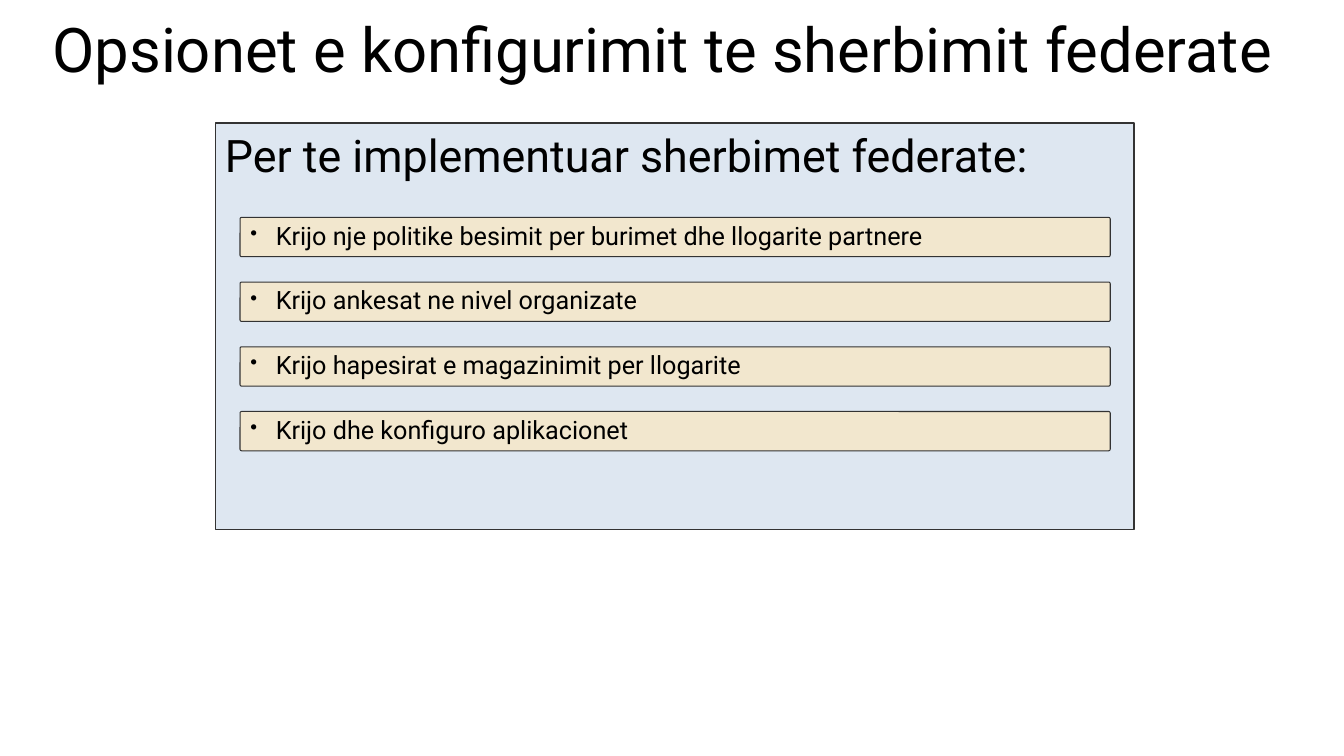
from lxml.etree import SubElement
from pptx import Presentation
from pptx.dml.color import RGBColor
from pptx.enum.shapes import MSO_SHAPE
from pptx.enum.text import MSO_ANCHOR, MSO_AUTO_SIZE, PP_ALIGN
from pptx.oxml.ns import qn
from pptx.util import Cm, Pt

COLOURS = {"text": "000000", "panel": "DEE7F1", "bar": "F2E7CE", "line": "333333"}
STEPS = [
    "Krijo nje politike besimit per burimet dhe llogarite partnere",
    "Krijo ankesat ne nivel organizate",
    "Krijo hapesirat e magazinimit per llogarite",
    "Krijo dhe konfiguro aplikacionet",
]


def write(shape, text, size, anchor, spacing, bullet=False):
    frame = shape.text_frame
    frame_format = {
        "word_wrap": True, "auto_size": MSO_AUTO_SIZE.NONE, "vertical_anchor": anchor,
        "margin_left": Cm(0.25), "margin_right": Cm(0.25),
        "margin_top": Cm(0.13), "margin_bottom": Cm(0.13),
    }
    for name, value in frame_format.items():
        setattr(frame, name, value)
    para = frame.paragraphs[0]
    para.alignment = PP_ALIGN.LEFT
    para.line_spacing = spacing
    if bullet:
        properties = para._p.get_or_add_pPr()
        properties.set("marL", str(Cm(0.64)))
        properties.set("indent", str(Cm(-0.64)))
        SubElement(properties, qn("a:buSzPct"), val="80000")
        SubElement(properties, qn("a:buChar"), char="•")
    span = para.add_run()
    span.text = text
    for name, value in {"name": "Roboto", "size": Pt(size), "bold": False}.items():
        setattr(span.font, name, value)
    span.font.color.rgb = RGBColor.from_string(COLOURS["text"])


def add_box(kind, left, top, width, height, fill):
    box = page.shapes.add_shape(kind, Cm(left), Cm(top), Cm(width), Cm(height))
    box.shadow.inherit = False
    box.fill.solid()
    box.fill.fore_color.rgb = RGBColor.from_string(COLOURS[fill])
    box.line.color.rgb = RGBColor.from_string(COLOURS["line"])
    box.line.width = Pt(0.75)
    return box


deck = Presentation()
deck.slide_width, deck.slide_height = Cm(33.87), Cm(19.05)
page = deck.slides.add_slide(deck.slide_layouts[5])

# Title
title = page.shapes.title
place = {"left": Cm(1.07), "top": Cm(0.5), "width": Cm(32), "height": Cm(2.95)}
for name, value in place.items():
    setattr(title, name, value)
write(title, "Opsionet e konfigurimit te sherbimit federate", 44, MSO_ANCHOR.TOP, 0.8)

# Panel with its heading
panel = add_box(MSO_SHAPE.RECTANGLE, 5.42, 3.1, 23.16, 10.24, "panel")
write(panel, "Per te implementuar sherbimet federate:", 32, MSO_ANCHOR.TOP, 1.0)

# Evenly spaced bars, one per step
for index, step in enumerate(STEPS):
    bar = add_box(MSO_SHAPE.ROUNDED_RECTANGLE, 6.05, 5.48 + index * 1.63, 21.93, 0.99, "bar")
    bar.adjustments[0] = 0.04
    write(bar, step, 18, MSO_ANCHOR.MIDDLE, 0.9, bullet=True)

deck.save("out.pptx")
